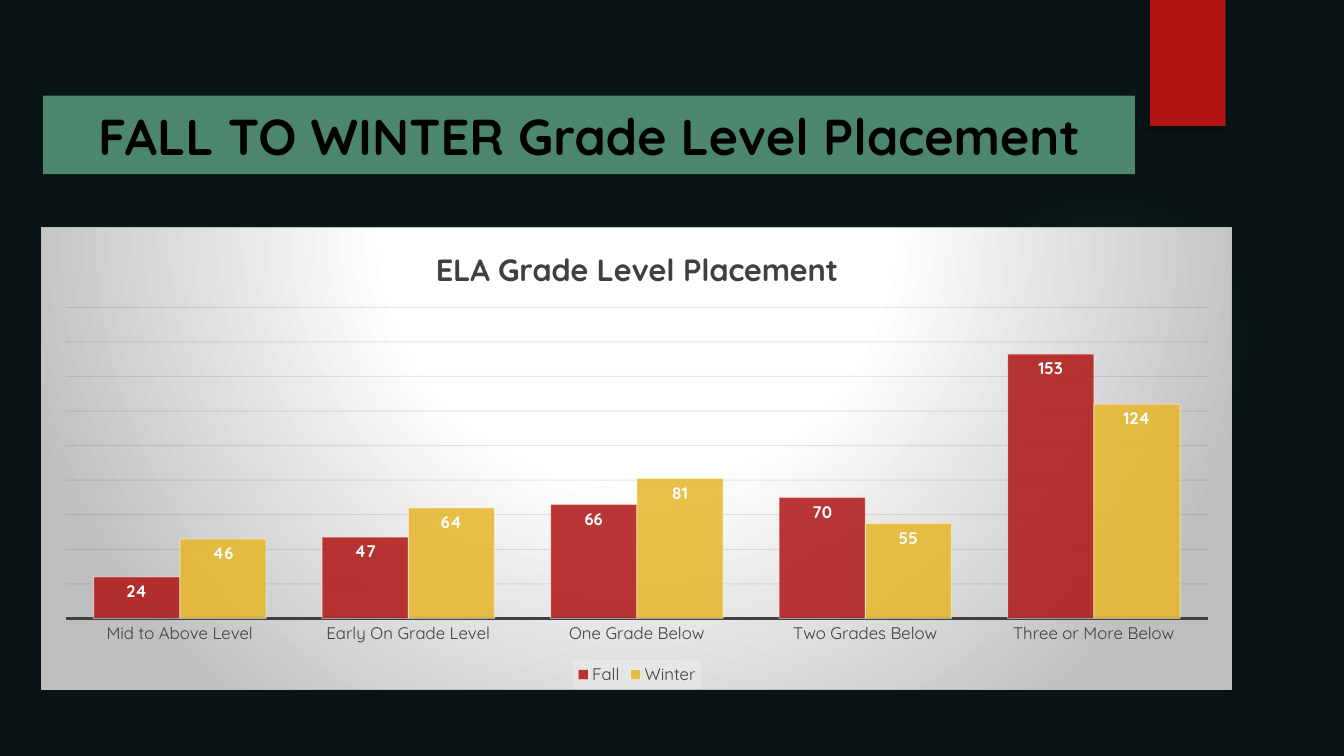
from pptx import Presentation
from pptx.chart.data import CategoryChartData
from pptx.dml.color import RGBColor
from pptx.enum.chart import XL_CHART_TYPE, XL_LABEL_POSITION, XL_LEGEND_POSITION, XL_TICK_LABEL_POSITION, XL_TICK_MARK
from pptx.enum.shapes import MSO_SHAPE
from pptx.enum.text import MSO_ANCHOR, PP_ALIGN
from pptx.oxml import parse_xml
from pptx.oxml.ns import nsdecls, qn
from pptx.util import Cm, Pt

COLORS = {
    "back": "081415", "glow": "50B9C1", "red": "B01513", "gold": "E6B729",
    "green": "4B866D", "black": "000000", "white": "FFFFFF",
    "ink": "404040", "grid": "0D0D0D", "gray": "BFBFBF", "legend": "F2F2F2",
}
FONT = "Quicksand"
CATEGORIES = ["Mid to Above Level", "Early On Grade Level", "One Grade Below",
              "Two Grades Below", "Three or More Below"]
SERIES = [("Fall", [24, 47, 66, 70, 153], "red"),
          ("Winter", [46, 64, 81, 55, 124], "gold")]


def rgb(name):
    return RGBColor.from_string(COLORS[name])


def set_font(font, size, color, bold=False):
    font.name, font.size, font.bold = FONT, Pt(size), bold
    font.color.rgb = rgb(color)


def write(tf, text, size=12, color="black", bold=False, align=PP_ALIGN.CENTER):
    p = tf.paragraphs[0]
    p.alignment = align
    r = p.add_run()
    r.text = text
    set_font(r.font, size, color, bold)


def paint(fill, color, alpha=100):
    fill.solid()
    fill.fore_color.rgb = rgb(color)
    if alpha < 100:
        clr = fill._xPr.find(f"{qn('a:solidFill')}/{qn('a:srgbClr')}")
        clr.append(parse_xml(f'<a:alpha {nsdecls("a")} val="{alpha * 1000}"/>'))


def stroke(line, color, width, alpha=100):
    paint(line.fill, color, alpha)
    line.width = Pt(width)


def gradient(stops, top, bottom):
    gs = "".join(
        f'<a:gs pos="{pos * 1000}"><a:srgbClr val="{COLORS[color]}">'
        f'<a:alpha val="{alpha * 1000}"/></a:srgbClr></a:gs>'
        for pos, color, alpha in stops)
    return (f'<a:gradFill {nsdecls("a")} rotWithShape="1"><a:gsLst>{gs}</a:gsLst>'
            f'<a:path path="circle"><a:fillToRect l="50000" t="{top * 1000}" '
            f'r="50000" b="{bottom * 1000}"/></a:path></a:gradFill>')


def add_block(s, kind, box, color):
    sp = s.shapes.add_shape(kind, *map(Cm, box))
    sp.shadow.inherit = False
    paint(sp.fill, color)
    sp.line.fill.background()
    return sp


def add_backdrop(s, box):
    left, top, width, height = box
    paint(s.background.fill, "back")
    glow = add_block(s, MSO_SHAPE.OVAL, (left + 23.9, top + 4.65, 7.82, 7.82), "glow")
    solid = glow._element.spPr.find(qn("a:solidFill"))
    stops = [(0, "glow", 7), (36, "glow", 6), (69, "glow", 0)]
    solid.getparent().replace(solid, parse_xml(gradient(stops, 50, 50)))
    tab = add_block(s, MSO_SHAPE.RECTANGLE, (left + 28.98, top, 1.91, 3.18), "red")
    tab._element.spPr.find(qn("a:effectLst")).append(parse_xml(
        f'<a:outerShdw {nsdecls("a")} blurRad="{Pt(3)}" dist="{Pt(2)}" dir="5400000">'
        f'<a:srgbClr val="{COLORS["black"]}"><a:alpha val="45000"/></a:srgbClr></a:outerShdw>'))


def add_title(s, box):
    tf = add_block(s, MSO_SHAPE.RECTANGLE, box, "green").text_frame
    tf.word_wrap = True
    tf.vertical_anchor = MSO_ANCHOR.MIDDLE
    write(tf, "FALL TO WINTER Grade Level Placement", size=36, bold=True)


def style_axes(chart):
    cat = chart.category_axis
    cat.major_tick_mark = XL_TICK_MARK.NONE
    cat.has_major_gridlines = False
    set_font(cat.tick_labels.font, 12, "ink")
    stroke(cat.format.line, "ink", 1.5)
    val = chart.value_axis
    val.visible = False
    val.tick_label_position = XL_TICK_LABEL_POSITION.NONE
    val.minimum_scale, val.maximum_scale, val.major_unit = 0, 180, 20
    val.has_major_gridlines = True
    stroke(val.major_gridlines.format.line, "grid", 0.75, alpha=10)


def style_series(plot):
    plot.gap_width, plot.overlap, plot.vary_by_categories = 65, 0, False
    for series, (_, _, color) in zip(plot.series, SERIES):
        paint(series.format.fill, color, alpha=85)
        stroke(series.format.line, "white", 0.75, alpha=50)
        labels = series.data_labels
        labels.show_value = True
        labels.position = XL_LABEL_POSITION.INSIDE_END
        set_font(labels.font, 12, "white", bold=True)


def style_legend(chart):
    chart.has_legend = True
    chart.legend.position = XL_LEGEND_POSITION.BOTTOM
    chart.legend.include_in_layout = False
    set_font(chart.legend.font, 12, "ink")
    text = chart.element.find(f".//{qn('c:legend')}/{qn('c:txPr')}")
    text.addprevious(parse_xml(
        f'<c:spPr {nsdecls("c", "a")}><a:solidFill><a:srgbClr val="{COLORS["legend"]}">'
        '<a:alpha val="39000"/></a:srgbClr></a:solidFill></c:spPr>'))


def style_area(chart):
    stops = [(0, "white", 100), (39, "white", 100), (100, "gray", 100)]
    chart.element.find(qn("c:chart")).addnext(parse_xml(
        f'<c:spPr {nsdecls("c", "a")}>{gradient(stops, -80, 180)}<a:ln w="{Pt(0.75)}">'
        f'<a:solidFill><a:srgbClr val="{COLORS["gray"]}"/></a:solidFill></a:ln></c:spPr>'))
    area = chart.element.find(f".//{qn('c:plotArea')}")
    for old in area.findall(qn("c:layout")):
        area.remove(old)
    places = "".join(f'<c:{tag} val="{val}"/>' for tag, val in (
        ("layoutTarget", "inner"), ("xMode", "edge"), ("yMode", "edge"),
        ("x", 0.02), ("y", 0.173), ("w", 0.96), ("h", 0.674)))
    area.insert(0, parse_xml(
        f'<c:layout {nsdecls("c")}><c:manualLayout>{places}</c:manualLayout></c:layout>'))


def add_placement_chart(s, box):
    data = CategoryChartData()
    data.categories = CATEGORIES
    for name, values, _ in SERIES:
        data.add_series(name, values)
    chart = s.shapes.add_chart(XL_CHART_TYPE.COLUMN_CLUSTERED, *map(Cm, box), data).chart
    set_font(chart.font, 10, "white")
    chart.has_title = True
    write(chart.chart_title.text_frame, "ELA Grade Level Placement",
          size=22, color="ink", bold=True)
    chart.chart_title.include_in_layout = False
    style_axes(chart)
    style_series(chart.plots[0])
    style_legend(chart)
    style_area(chart)


def main():
    prs = Presentation()
    prs.slide_width, prs.slide_height = Cm(33.87), Cm(19.05)
    s = prs.slides.add_slide(prs.slide_layouts[6])
    add_backdrop(s, (0, 0, 33.87, 19.05))
    add_title(s, (1.09, 2.41, 27.51, 1.98))
    add_placement_chart(s, (1.04, 5.72, 30.02, 11.66))
    prs.save("out.pptx")


if __name__ == "__main__":
    main()
